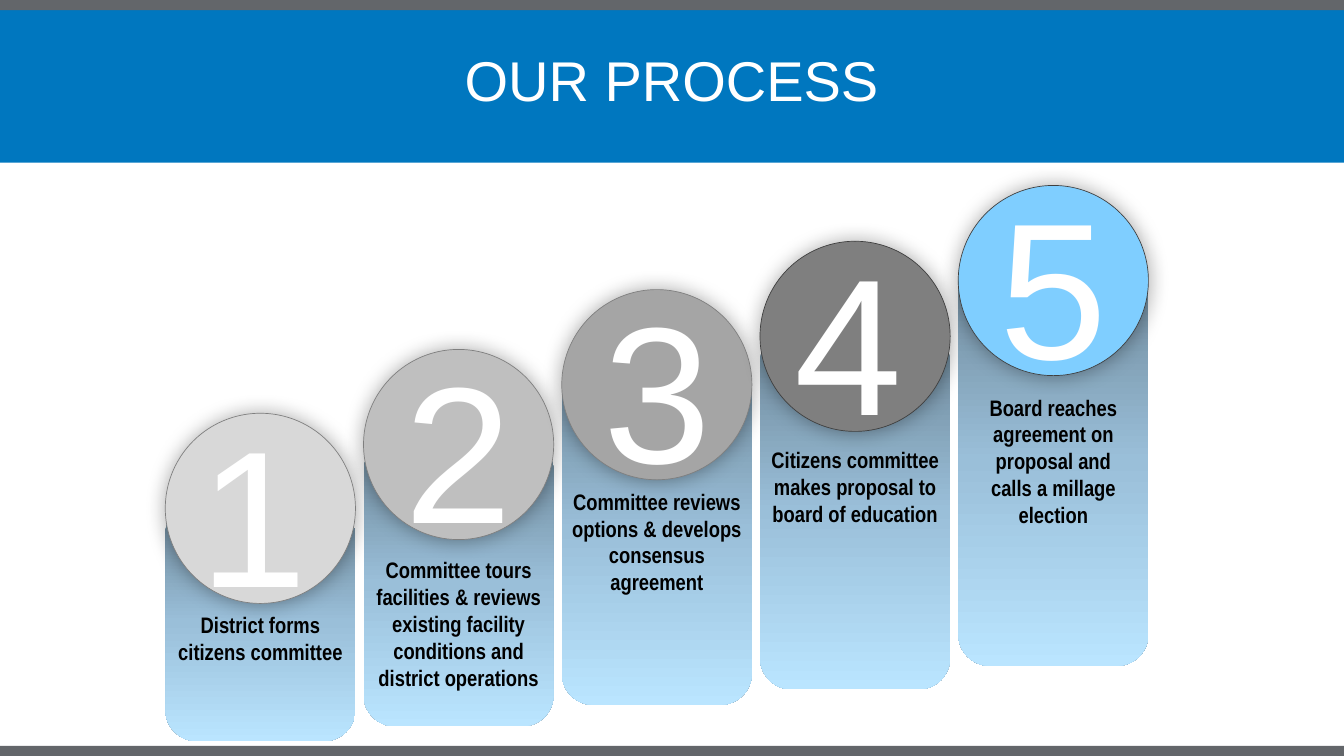
"""Build the five-step process slide with rising numbered columns."""
from dataclasses import dataclass

from lxml import etree
from pptx import Presentation
from pptx.dml.color import RGBColor
from pptx.enum.shapes import MSO_SHAPE as Shape
from pptx.enum.text import MSO_ANCHOR as Anchor, PP_ALIGN as Align
from pptx.oxml import parse_xml
from pptx.oxml.ns import nsdecls, qn
from pptx.util import Inches, Pt


@dataclass(frozen=True)
class Theme:
    banner: str = "0077BF"
    edge: str = "63666A"
    white: str = "FFFFFF"
    black: str = "000000"
    column_stops: tuple = ((0, "6B8495"), (50, "9ABFD9"), (100, "BAE5FF"))
    heading_font: str = "Arial"
    label_font: str = "Arial Narrow"
    title_size: int = 60
    number_size: int = 208
    label_size: int = 24
    outline: float = 0.75
    shadow_blur: int = 22
    shadow_opacity: int = 35


THEME = Theme()
WIDTH, HEIGHT = 20, 11.25
TITLE = "OUR PROCESS"
BANDS = [
    (0, 2.42, THEME.banner),
    (0, 0.15, THEME.edge),
    (HEIGHT - 0.15, 0.15, THEME.edge),
]
STEPS = [
    dict(disc="D8D8D8", rim="7F7F7F", disc_top=6.15, top=7.48, bottom=11.03,
         number_shift=0.31, label_top=9.04, label_height=0.88,
         label=["District forms", "citizens committee"]),
    dict(disc="BFBFBF", rim="7F7F7F", disc_top=5.2, top=6.54, bottom=10.81,
         number_shift=0.41, label_top=8.23, label_height=2.03,
         label=["Committee tours facilities & reviews existing facility "
                "conditions and district operations"]),
    dict(disc="A5A5A5", rim="7F7F7F", disc_top=4.31, top=5.27, bottom=10.49,
         number_shift=0.42, label_top=7.21, label_height=1.67,
         label=["Committee reviews options & develops consensus", "agreement"]),
    dict(disc="7F7F7F", rim="3F3F3F", disc_top=3.59, top=4.92, bottom=10.26,
         number_shift=0.31, label_top=6.59, label_height=1.27,
         label=["Citizens committee makes proposal to board of education"]),
    dict(disc="7FCEFF", rim="3F3F3F", disc_top=2.76, top=3.79, bottom=9.91,
         number_shift=0.41, label_top=5.81, label_height=2.03,
         label=["Board reaches agreement on proposal and",
                "calls a millage election"]),
]
FIRST_LEFT, PITCH, COLUMN = 2.46, 2.95, 2.83
NUMBER_WIDTH, NUMBER_HEIGHT, NUMBER_RISE = 2.01, 3.45, 0.35


def add_figure(slide, kind, box, fill=None, rim=None):
    figure = slide.shapes.add_shape(kind, *map(Inches, box))
    figure.shadow.inherit = False
    if fill:
        figure.fill.solid()
        figure.fill.fore_color.rgb = RGBColor.from_string(fill)
    if rim:
        figure.line.color.rgb = RGBColor.from_string(rim)
        figure.line.width = Pt(THEME.outline)
    else:
        figure.line.fill.background()
    return figure


def add_text(slide, paragraphs, box, *, size, font=THEME.heading_font,
             color=THEME.white, bold=False, side_inset=0.1, anchor=Anchor.TOP):
    frame = slide.shapes.add_textbox(*map(Inches, box)).text_frame
    frame.word_wrap = True
    frame.vertical_anchor = anchor
    frame.margin_left = frame.margin_right = Inches(side_inset)
    frame.text = "\n".join(paragraphs)
    for paragraph in frame.paragraphs:
        paragraph.alignment = Align.CENTER
        for run in paragraph.runs:
            run.font.name = font
            run.font.size = Pt(size)
            run.font.bold = bold
            run.font.color.rgb = RGBColor.from_string(color)


def shade_downward(column):
    stops = "".join(
        f'<a:gs pos="{share * 1000}"><a:srgbClr val="{color}"/></a:gs>'
        for share, color in THEME.column_stops)
    gradient = parse_xml(
        f'<a:gradFill {nsdecls("a")} rotWithShape="1"><a:gsLst>{stops}</a:gsLst>'
        '<a:lin ang="5400000" scaled="0"/></a:gradFill>')
    column._element.spPr.find(qn("a:prstGeom")).addnext(gradient)


def add_halo(disc):
    effects = disc._element.spPr.find(qn("a:effectLst"))
    halo = etree.SubElement(
        effects, qn("a:outerShdw"), blurRad=str(Pt(THEME.shadow_blur)),
        dist="0", dir="0", algn="ctr", rotWithShape="0")
    shade = etree.SubElement(halo, qn("a:srgbClr"), val=THEME.black)
    etree.SubElement(shade, qn("a:alpha"), val=str(THEME.shadow_opacity * 1000))


def add_step(slide, index, step):
    left = FIRST_LEFT + index * PITCH
    column = add_figure(slide, Shape.ROUNDED_RECTANGLE,
                        (left, step["top"], COLUMN, step["bottom"] - step["top"]))
    shade_downward(column)
    disc = add_figure(slide, Shape.OVAL, (left, step["disc_top"], COLUMN, COLUMN),
                      fill=step["disc"], rim=step["rim"])
    add_halo(disc)
    add_text(slide, [str(index + 1)],
             (left + step["number_shift"], step["disc_top"] - NUMBER_RISE,
              NUMBER_WIDTH, NUMBER_HEIGHT), size=THEME.number_size)
    add_text(slide, step["label"],
             (left, step["label_top"], COLUMN, step["label_height"]),
             size=THEME.label_size, font=THEME.label_font, color=THEME.black,
             bold=True, side_inset=0)


def main():
    deck = Presentation()
    deck.slide_width, deck.slide_height = Inches(WIDTH), Inches(HEIGHT)
    slide = deck.slides.add_slide(deck.slide_layouts[6])
    for top, height, color in BANDS:
        add_figure(slide, Shape.RECTANGLE, (0, top, WIDTH, height), fill=color)
    add_text(slide, [TITLE], (3.61, 0.52, 12.77, 1.3),
             size=THEME.title_size, anchor=Anchor.MIDDLE)
    for index, step in enumerate(STEPS):
        add_step(slide, index, step)
    deck.save("out.pptx")


if __name__ == "__main__":
    main()
